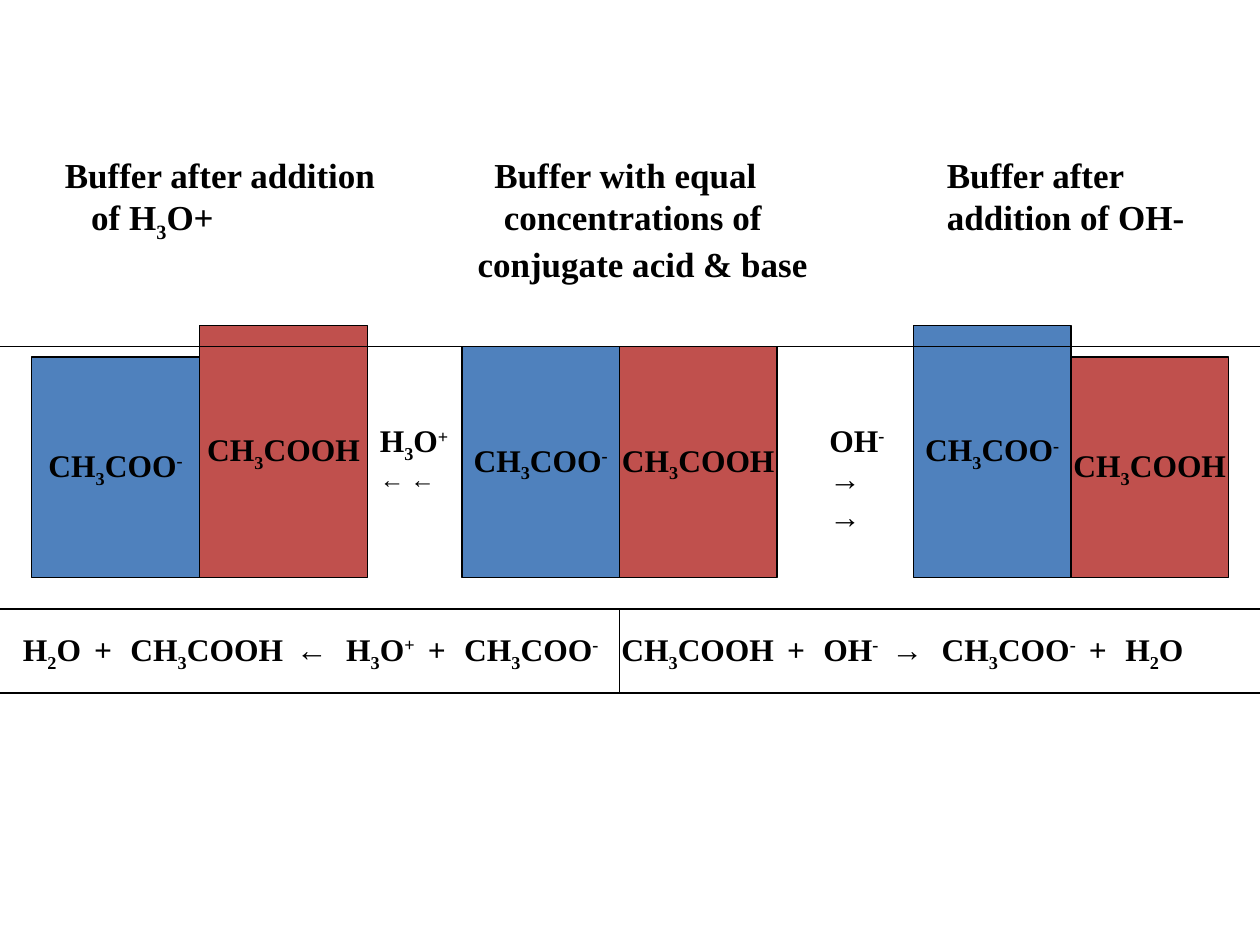
from dataclasses import dataclass

from lxml.etree import SubElement
from pptx import Presentation
from pptx.dml.color import RGBColor
from pptx.enum.shapes import MSO_CONNECTOR as Connector, MSO_SHAPE as Preset
from pptx.enum.text import MSO_ANCHOR as Anchor, MSO_AUTO_SIZE as AutoSize, PP_ALIGN as Align
from pptx.oxml.ns import qn
from pptx.util import Pt

PX = 7620
SLIDE_WIDTH, SLIDE_HEIGHT = 1200, 900
BASELINES = {"_": -25000, "^": 30000}
ACETATE = "CH|_3|COO|^-"
ACETIC_ACID = "CH|_3|COOH"
HYDRONIUM = "H|_3|O|^+"
HYDROXIDE = "OH|^-"
WATER = "H|_2|O"


@dataclass(frozen=True)
class Theme:
    font: str = "Times New Roman"
    ink: RGBColor = RGBColor(0, 0, 0)
    base: RGBColor = RGBColor(0x4F, 0x81, 0xBD)
    acid: RGBColor = RGBColor(0xC0, 0x50, 0x4D)
    heading: int = 20
    body: int = 18
    arrow: int = 14
    line: float = 0.75
    operator_gap: int = 300


THEME = Theme()


def to_emu(*lengths):
    return [length * PX for length in lengths]


def add_spans(para, markup, size):
    for piece in markup.split("|"):
        baseline = BASELINES.get(piece[0])
        span = para.add_run()
        span.text = piece[1:] if baseline else piece
        span.font.name = THEME.font
        span.font.size = Pt(size)
        span.font.bold = True
        span.font.color.rgb = THEME.ink
        properties = span.font._element
        if baseline:
            properties.set("baseline", str(baseline))
        elif piece.startswith(" "):
            properties.set("spc", str(THEME.operator_gap))


def set_tabs(para, stops):
    tab_list = SubElement(para._p.get_or_add_pPr(), qn("a:tabLst"))
    for stop in stops:
        SubElement(tab_list, qn("a:tab"), pos=str(stop * PX), algn="l")


def add_text(page, bounds, lines):
    box = page.shapes.add_textbox(*to_emu(*bounds))
    frame = box.text_frame
    frame.word_wrap = True
    frame.auto_size = AutoSize.SHAPE_TO_FIT_TEXT
    for index, (markup, size, stops) in enumerate(lines):
        para = frame.add_paragraph() if index else frame.paragraphs[0]
        if stops:
            set_tabs(para, stops)
        add_spans(para, markup, size)


def add_bar(page, left, top, width, bottom, fill, formula):
    bar = page.shapes.add_shape(Preset.RECTANGLE, *to_emu(left, top, width, bottom - top))
    bar.shadow.inherit = False
    bar.fill.solid()
    bar.fill.fore_color.rgb = fill
    bar.line.color.rgb = THEME.ink
    bar.line.width = Pt(THEME.line)
    frame = bar.text_frame
    frame.word_wrap = False
    frame.vertical_anchor = Anchor.MIDDLE
    para = frame.paragraphs[0]
    para.alignment = Align.CENTER
    add_spans(para, formula, THEME.body)


def add_buffer(page, left, width, base_top, acid_top, bottom=550):
    add_bar(page, left, base_top, width, bottom, THEME.base, ACETATE)
    add_bar(page, left + width, acid_top, width, bottom, THEME.acid, ACETIC_ACID)


def add_line(page, *ends):
    line = page.shapes.add_connector(Connector.STRAIGHT, *to_emu(*ends))
    line.line.color.rgb = THEME.ink
    line.line.width = Pt(THEME.line)
    SubElement(line._element.spPr, qn("a:effectLst"))


def main():
    deck = Presentation()
    deck.slide_width, deck.slide_height = to_emu(SLIDE_WIDTH, SLIDE_HEIGHT)
    page = deck.slides.add_slide(deck.slide_layouts[6])

    add_text(page, (50, 140, 1150, 220), [
        ("Buffer after addition\tBuffer with equal\tBuffer after", THEME.heading, (409, 840)),
        ("\tof H|_3|O+\tconcentrations of\taddition of OH-", THEME.heading, (25, 418, 840)),
        ("\tconjugate acid & base", THEME.heading, (393,)),
    ])

    level, low, high = 330, 340, 310
    add_buffer(page, 30, 160, low, high)
    add_buffer(page, 440, 150, level, level)
    add_buffer(page, 870, 150, high, low)
    add_line(page, 0, level, SLIDE_WIDTH, level)

    add_text(page, (350, 395, 137, 80), [
        (HYDRONIUM, THEME.body, ()),
        ("← ←", THEME.arrow, ()),
    ])
    add_text(page, (778, 395, 83, 84), [
        (HYDROXIDE, THEME.body, ()),
        ("→→", THEME.body, ()),
    ])

    acid_reaction = f"{WATER}| + |{ACETIC_ACID}| ← |{HYDRONIUM}| + |{ACETATE}"
    base_reaction = f"{ACETIC_ACID}| + |{HYDROXIDE}| → |{ACETATE}| + |{WATER}"
    add_text(page, (-12, 594, 1212, 48), [
        (f"\t{acid_reaction}|\t{base_reaction}", THEME.body, (22, 592)),
    ])

    band_top, band_bottom, divider = 580, 660, 590
    for height in (band_top, band_bottom):
        add_line(page, 0, height, SLIDE_WIDTH, height)
    add_line(page, divider, band_top, divider, band_bottom)

    deck.save("out.pptx")


if __name__ == "__main__":
    main()
